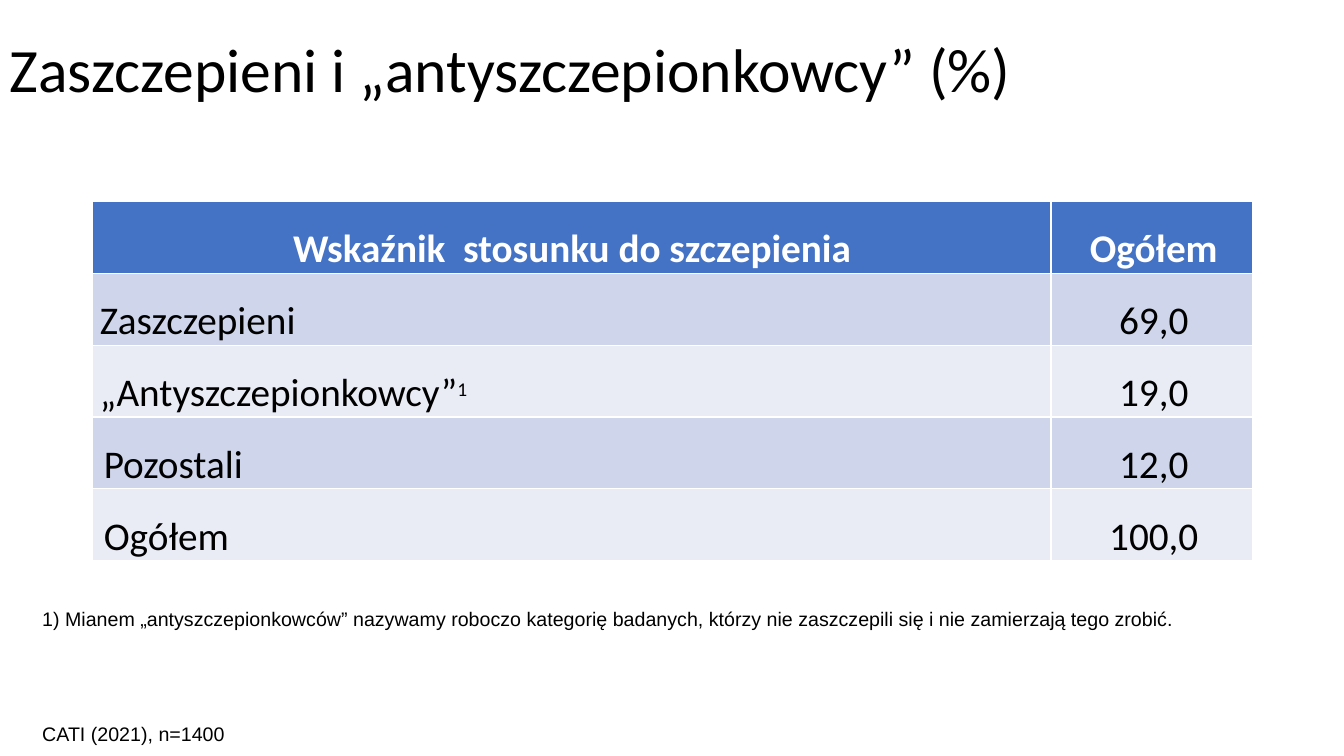
from dataclasses import dataclass

from pptx import Presentation, util as u
from pptx.dml.color import RGBColor
from pptx.enum import text as t

BLACK = RGBColor(0x00, 0x00, 0x00)
WHITE = RGBColor(0xFF, 0xFF, 0xFF)
BLUE = RGBColor(0x44, 0x72, 0xC4)
DARK = RGBColor(0xCF, 0xD5, 0xEA)
LIGHT = RGBColor(0xE9, 0xEB, 0xF5)

# Slide size and a 100-column, 100-row grid
WIDE, HIGH = u.Inches(13.33), u.Inches(7.5)
COL, ROW = WIDE / 100, HIGH / 100

LEFT, MID, JUST = t.PP_ALIGN.LEFT, t.PP_ALIGN.CENTER, t.PP_ALIGN.JUSTIFY


@dataclass
class Note:
    words: str
    x: float
    y: float
    w: float
    h: float
    size: int
    face: str
    anchor: t.MSO_ANCHOR = t.MSO_ANCHOR.MIDDLE
    wrap: bool = True
    space: float = 1.0


@dataclass
class Line:
    label: str
    value: str
    align: t.PP_ALIGN = LEFT
    indent: float = 0
    mark: str = ""


NOTES = [
    Note("Zaszczepieni i „antyszczepionkowcy” (%)", 0, 0, 86.3, 19.33, 44,
         "Calibri", space=0.9),
    Note("CATI (2021), n=1400", 2.4, 94.13, 37.5, 5.87, 14, "Arial", wrap=False),
    Note("1) Mianem „antyszczepionkowców” nazywamy roboczo kategorię badanych, "
         "którzy nie zaszczepili się i nie zamierzają tego zrobić.",
         2.4, 79.6, 93.7, 4.53, 14, "Arial", t.MSO_ANCHOR.TOP),
]

LINES = [
    Line("Wskaźnik  stosunku do szczepienia", "Ogółem", MID),
    Line("Zaszczepieni", "69,0"),
    Line("„Antyszczepionkowcy”", "19,0", mark="1"),
    Line("Pozostali", "12,0", JUST, 0.04),
    Line("Ogółem", "100,0", JUST, 0.04),
]


def style(para, size: int, face: str, color: RGBColor, bold: bool = False) -> None:
    font = para.font
    font.size, font.name, font.bold = u.Pt(size), face, bold
    font.color.rgb = color


def write(slide, note: Note) -> None:
    box = slide.shapes.add_textbox(int(note.x * COL), int(note.y * ROW),
                                   int(note.w * COL), int(note.h * ROW))
    frame = box.text_frame
    frame.word_wrap, frame.vertical_anchor = note.wrap, note.anchor
    para = frame.paragraphs[0]
    para.text, para.line_spacing = note.words, note.space
    style(para, note.size, note.face, BLACK)


def fill(cell, words: str, align: t.PP_ALIGN, indent: float, back: RGBColor,
         head: bool, mark: str = "") -> None:
    cell.fill.solid()
    cell.fill.fore_color.rgb = back
    cell.margin_left = cell.margin_right = u.Inches(0.07)
    cell.margin_top = cell.margin_bottom = 0
    para = cell.text_frame.paragraphs[0]
    para.text, para.alignment, para.line_spacing = words, align, 1.5
    style(para, 28, "Calibri", WHITE if head else BLACK, head)
    para._p.get_or_add_pPr().set("marL", str(u.Inches(indent)))
    if mark:
        run = para.add_run()
        run.text, run.font.size = mark, u.Pt(24)
        run.font._element.set("baseline", "30000")


def tabulate(slide, lines: list[Line]) -> None:
    grid = slide.shapes.add_table(len(lines), 2, int(6.9 * COL), int(26.67 * ROW),
                                  int(86.3 * COL), int(47.5 * ROW)).table
    for col, share in zip(grid.columns, (71.3, 15)):
        col.width = int(share * COL)
    for i, line in enumerate(lines):
        back = BLUE if i == 0 else DARK if i % 2 else LIGHT
        fill(grid.cell(i, 0), line.label, line.align, line.indent, back, i == 0,
             line.mark)
        fill(grid.cell(i, 1), line.value, MID, 0.04, back, i == 0)


def main() -> None:
    deck = Presentation()
    deck.slide_width, deck.slide_height = WIDE, HIGH
    slide = deck.slides.add_slide(deck.slide_layouts[6])

    # Title, source and footnote
    for note in NOTES:
        write(slide, note)

    # Results table
    tabulate(slide, LINES)
    deck.save("out.pptx")


if __name__ == "__main__":
    main()
